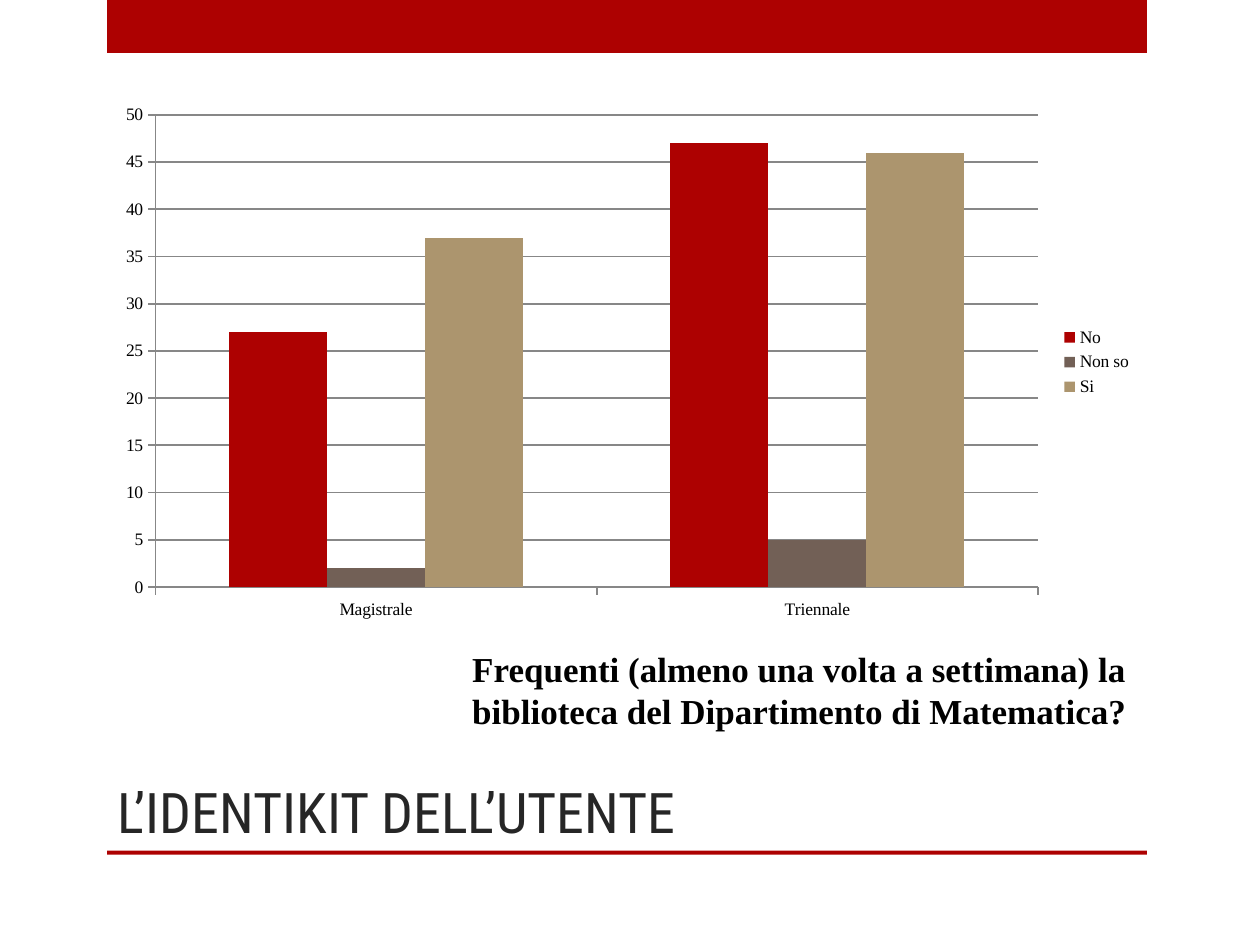
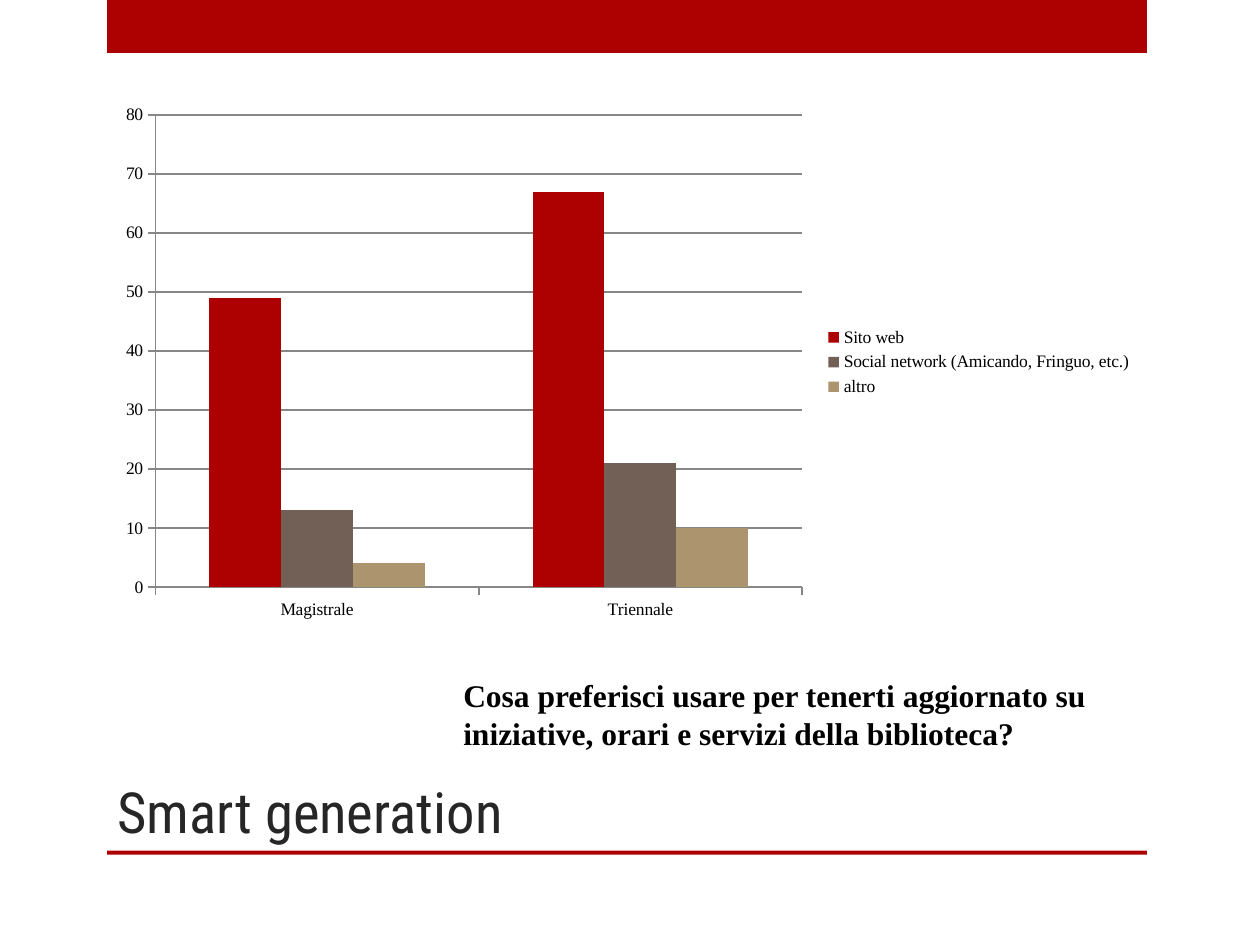
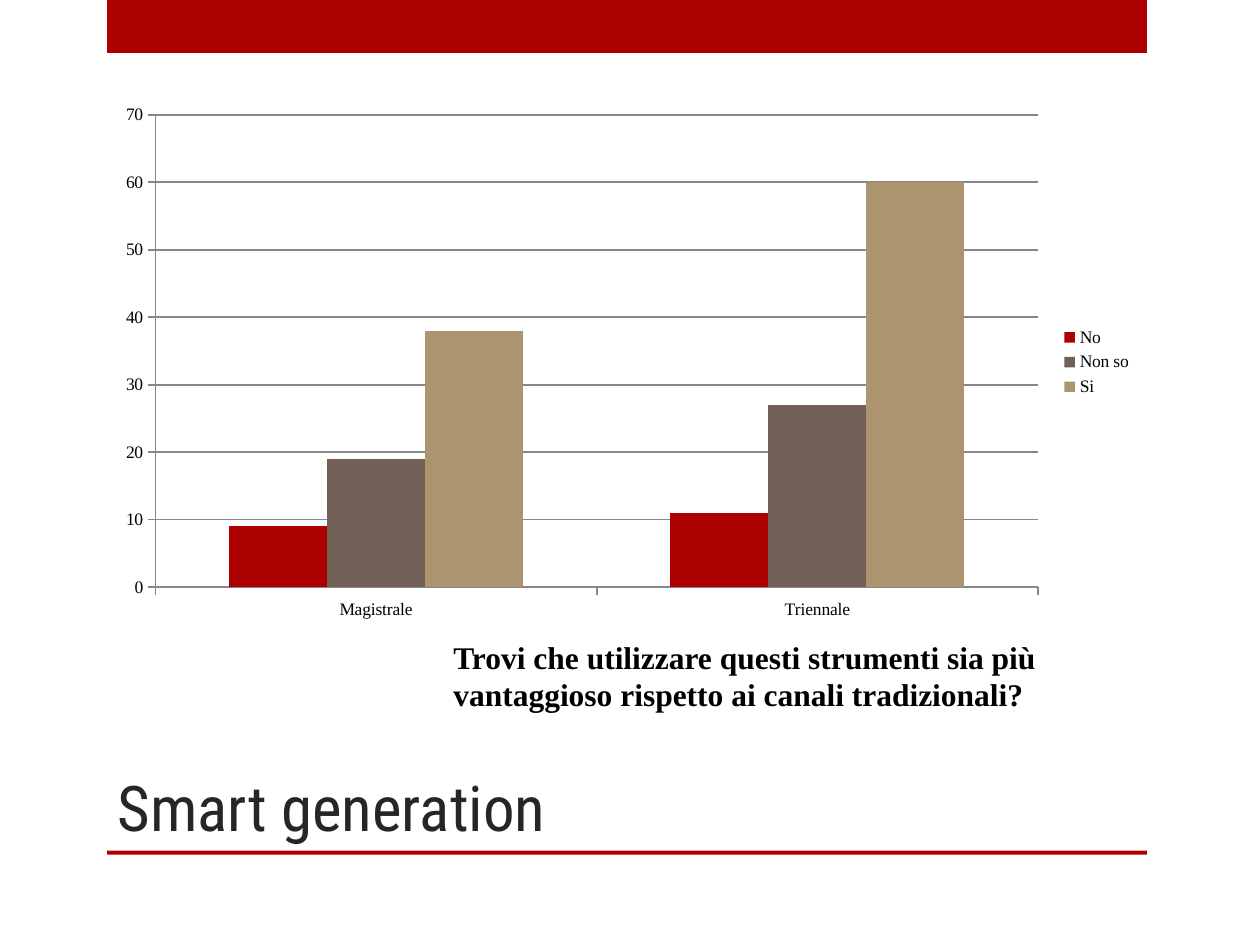
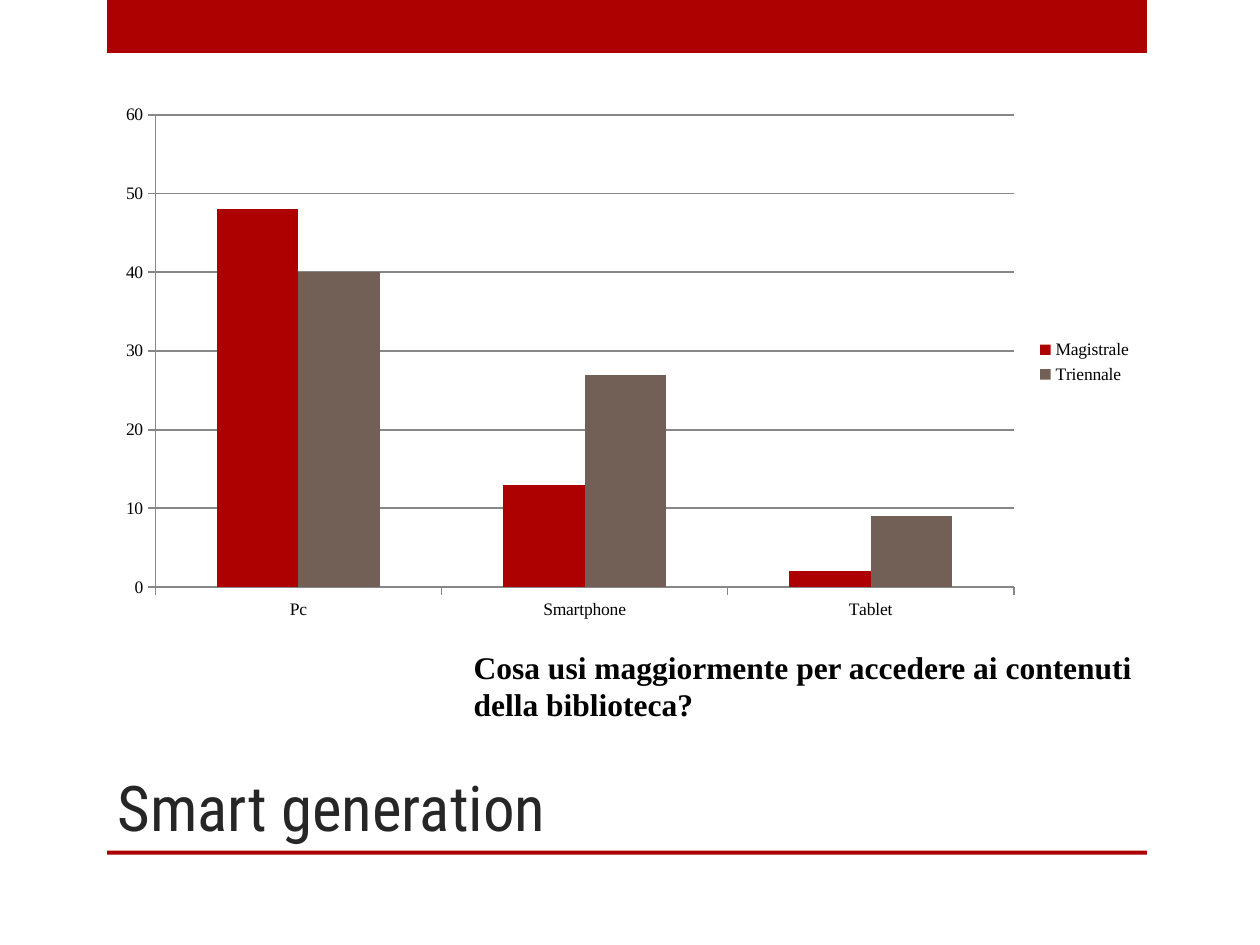
"""Builds four slides of library survey charts."""
from dataclasses import dataclass

from pptx import Presentation
from pptx import util as u
from pptx.chart import data
from pptx.dml import color
from pptx.enum import chart as ch, shapes, text

RED, BROWN, TAN = "AD0101", "726056", "AC956E"
BLACK, DARK, GREY = "000000", "262626", "878787"
SERIF, SANS = "Times New Roman", "Roboto Condensed"
LEFT, WIDE, BASE = 2.12, 20.96, 17.15
LEVELS = ("Magistrale", "Triennale")


@dataclass(frozen=True)
class Box:
    left: float
    top: float
    width: float
    height: float

    def cm(self) -> tuple[u.Length, ...]:
        """Return the four lengths in the order python-pptx takes them."""
        return tuple(u.Cm(v) for v in (self.left, self.top, self.width, self.height))


@dataclass(frozen=True)
class Style:
    face: str
    size: float
    ink: str
    bold: bool = False


@dataclass(frozen=True)
class Page:
    title: str
    size: float
    height: float
    query: str
    spot: Box
    cats: tuple[str, ...]
    rows: dict[str, tuple[int, ...]]
    point: float = 18


BANDS = (Box(2.16, 0, WIDE, 1.07), Box(2.16, BASE, WIDE, 0.08))
PLOT = Box(LEFT, 1.9, WIDE, 10.8)

PAGES = (
    Page("L’IDENTIKIT DELL’UTENTE", 32, 4.45,
         "Frequenti (almeno una volta a settimana) la biblioteca "
         "del Dipartimento di Matematica?",
         Box(9.27, 12.93, 14.81, 1.96), LEVELS,
         {"No": (27, 47), "Non so": (2, 5), "Si": (37, 46)}, 20),
    Page("Smart generation", 32.4, 1.52,
         "Cosa preferisci usare per tenerti aggiornato su iniziative, "
         "orari e servizi della biblioteca?",
         Box(9.09, 13.51, 14.6, 1.8), LEVELS,
         {"Sito web": (49, 67),
          "Social network (Amicando, Fringuo, etc.)": (13, 21),
          "altro": (4, 10)}),
    Page("Smart generation", 36, 1.83,
         "Trovi che utilizzare questi strumenti sia più vantaggioso "
         "rispetto ai canali tradizionali?",
         Box(8.89, 12.73, 14.6, 1.8), LEVELS,
         {"No": (9, 11), "Non so": (19, 27), "Si": (38, 60)}),
    Page("Smart generation", 36, 1.83,
         "Cosa usi maggiormente per accedere ai contenuti della biblioteca?",
         Box(9.3, 12.93, 14.6, 1.8), ("Pc", "Smartphone", "Tablet"),
         {"Magistrale": (48, 13, 2), "Triennale": (40, 27, 9)}),
)


def paint(fill, tint: str) -> None:
    """Make a fill solid in the given hex colour."""
    fill.solid()
    fill.fore_color.rgb = color.RGBColor.from_string(tint)


def dress(font, style: Style) -> None:
    """Apply a text style to a font."""
    font.name, font.size, font.bold = style.face, u.Pt(style.size), style.bold
    paint(font.fill, style.ink)


def band(slide, box: Box) -> None:
    """Draw a plain red bar."""
    bar = slide.shapes.add_shape(shapes.MSO_SHAPE.RECTANGLE, *box.cm())
    bar.shadow.inherit = False
    paint(bar.fill, RED)
    bar.line.fill.background()


def write(slide, box: Box, words: str, style: Style,
          anchor=text.MSO_ANCHOR.TOP) -> None:
    """Add a wrapped text box with one paragraph."""
    frame = slide.shapes.add_textbox(*box.cm()).text_frame
    frame.word_wrap = True
    frame.vertical_anchor = anchor
    para = frame.paragraphs[0]
    para.text = words
    dress(para.font, style)


def rule(line) -> None:
    """Style an axis or grid line."""
    paint(line.fill, GREY)
    line.width = u.Pt(1)


def plot(slide, page: Page) -> None:
    """Add the clustered column chart of a page."""
    table = data.CategoryChartData()
    table.categories = page.cats
    for name, vals in page.rows.items():
        table.add_series(name, vals)
    chart = slide.shapes.add_chart(
        ch.XL_CHART_TYPE.COLUMN_CLUSTERED, *PLOT.cm(), table).chart
    dress(chart.font, Style(SERIF, 10, BLACK))
    chart.has_title = False
    chart.has_legend = True
    chart.legend.position = ch.XL_LEGEND_POSITION.RIGHT
    chart.legend.include_in_layout = False
    for axis in (chart.category_axis, chart.value_axis):
        axis.major_tick_mark = ch.XL_TICK_MARK.OUTSIDE
        axis.minor_tick_mark = ch.XL_TICK_MARK.NONE
        rule(axis.format.line)
    rule(chart.value_axis.major_gridlines.format.line)
    bars = chart.plots[0]
    bars.vary_by_categories = False
    bars.gap_width = 150
    for row, tint in zip(bars.series, (RED, BROWN, TAN)):
        paint(row.format.fill, tint)


def main() -> None:
    """Build and save the deck."""
    deck = Presentation()
    deck.slide_width, deck.slide_height = u.Cm(25.4), u.Cm(19.05)
    for page in PAGES:
        slide = deck.slides.add_slide(deck.slide_layouts[6])
        for box in BANDS:
            band(slide, box)
        head = Box(LEFT, BASE - page.height, 18.85, page.height)
        write(slide, head, page.title, Style(SANS, page.size, DARK),
              text.MSO_ANCHOR.BOTTOM)
        write(slide, page.spot, page.query,
              Style(SERIF, page.point, BLACK, True))
        plot(slide, page)
    deck.save("out.pptx")


if __name__ == "__main__":
    main()
